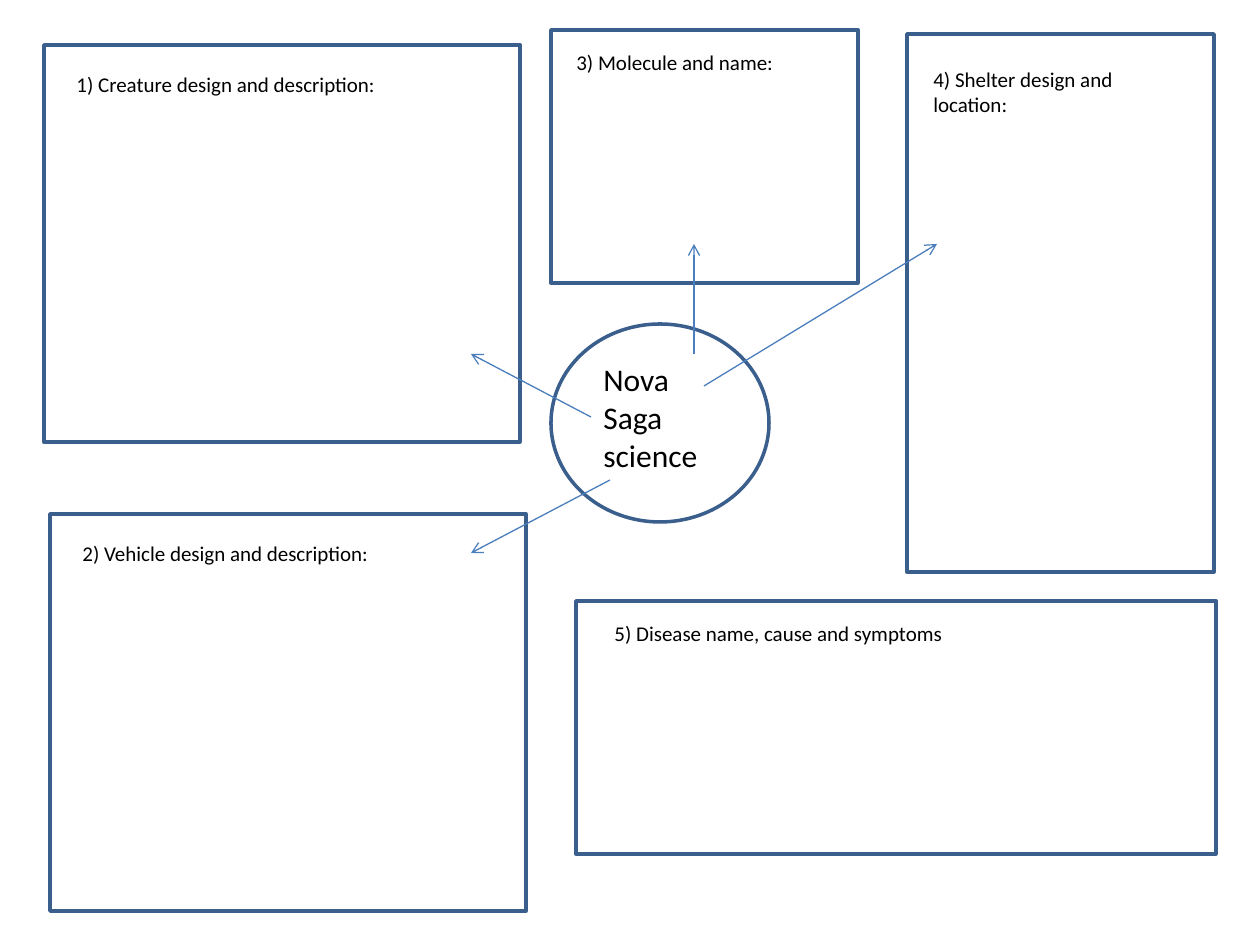
import pptx
import pptx.dml.color
import pptx.enum.shapes
import pptx.enum.text
import pptx.oxml
import pptx.oxml.ns
import pptx.util

RGBColor = pptx.dml.color.RGBColor
WHITE = RGBColor(0xFF, 0xFF, 0xFF)
BLACK = RGBColor(0x00, 0x00, 0x00)
OUTLINE = RGBColor(0x3A, 0x5F, 0x8C)
ARROW = RGBColor(0x4B, 0x7E, 0xBC)

EMU_PER_PX = 914400 / 126
SHAPE = pptx.enum.shapes.MSO_SHAPE

# Frame, label offset inside the frame, label size, text
PANELS = [
    ((44, 45, 476, 397), (20, 20), (407, 38), "1) Creature design and description:"),
    ((50, 514, 476, 397), (20, 20), (407, 38), "2) Vehicle design and description:"),
    ((551, 30, 307, 253), (13, 13), (263, 38), "3) Molecule and name:"),
    ((907, 34, 307, 538), (14, 26), (263, 63), "4) Shelter design and location:"),
    ((576, 601, 640, 253), (26, 13), (547, 38), "5) Disease name, cause and symptoms"),
]

# Start and end of each arrow leaving the hub
ARROWS = [
    ((591, 417), (471, 354)),
    ((610, 480), (471, 553)),
    ((694, 354), (694, 244)),
    ((704, 386), (937, 244)),
]


def px(*lengths):
    return [pptx.util.Emu(round(length * EMU_PER_PX)) for length in lengths]


def add_frame(shapes, kind, area):
    frame = shapes.add_shape(kind, *px(*area))
    frame.shadow.inherit = False
    frame.fill.solid()
    frame.fill.fore_color.rgb = WHITE
    frame.line.color.rgb = OUTLINE
    frame.line.width = pptx.util.Pt(2)


def add_label(shapes, area, lines, size):
    box = shapes.add_textbox(*px(*area))
    box.text_frame.word_wrap = True
    box.text_frame.auto_size = pptx.enum.text.MSO_AUTO_SIZE.SHAPE_TO_FIT_TEXT
    box.text_frame.text = "\n".join(lines)
    font_format = {"name": "Calibri", "size": pptx.util.Pt(size)}
    for para in box.text_frame.paragraphs:
        for span in para.runs:
            for name, value in font_format.items():
                setattr(span.font, name, value)
            span.font.color.rgb = BLACK


def add_panel(page, area, offset, size, text):
    group = page.shapes.add_group_shape()
    add_frame(group.shapes, SHAPE.RECTANGLE, area)
    label_area = (area[0] + offset[0], area[1] + offset[1], *size)
    add_label(group.shapes, label_area, [text], 12)


def add_arrow(page, start, end):
    straight = pptx.enum.shapes.MSO_CONNECTOR.STRAIGHT
    arrow = page.shapes.add_connector(straight, *px(*start, *end))
    arrow.line.color.rgb = ARROW
    arrow.line.width = pptx.util.Pt(0.75)
    # Open arrowhead at the end, and no shadow
    properties = arrow.line.color and arrow._element.spPr
    line = properties.find(pptx.oxml.ns.qn("a:ln"))
    namespace = pptx.oxml.ns.nsdecls("a")
    line.append(pptx.oxml.parse_xml(f'<a:tailEnd {namespace} type="arrow"/>'))
    properties.append(pptx.oxml.parse_xml(f"<a:effectLst {namespace}/>"))


def main():
    deck = pptx.Presentation()
    deck.slide_width, deck.slide_height = px(1260, 945)
    page = deck.slides.add_slide(deck.slide_layouts[6])

    # Hub
    add_frame(page.shapes, SHAPE.OVAL, (551, 324, 218, 198))
    add_label(page.shapes, (591, 354, 139, 127), ["Nova", "Saga", "science"], 18)

    # Panels around the hub
    for area, offset, size, text in PANELS:
        add_panel(page, area, offset, size, text)

    # Arrows from the hub to the panels
    for start, end in ARROWS:
        add_arrow(page, start, end)

    deck.save("out.pptx")


if __name__ == "__main__":
    main()
